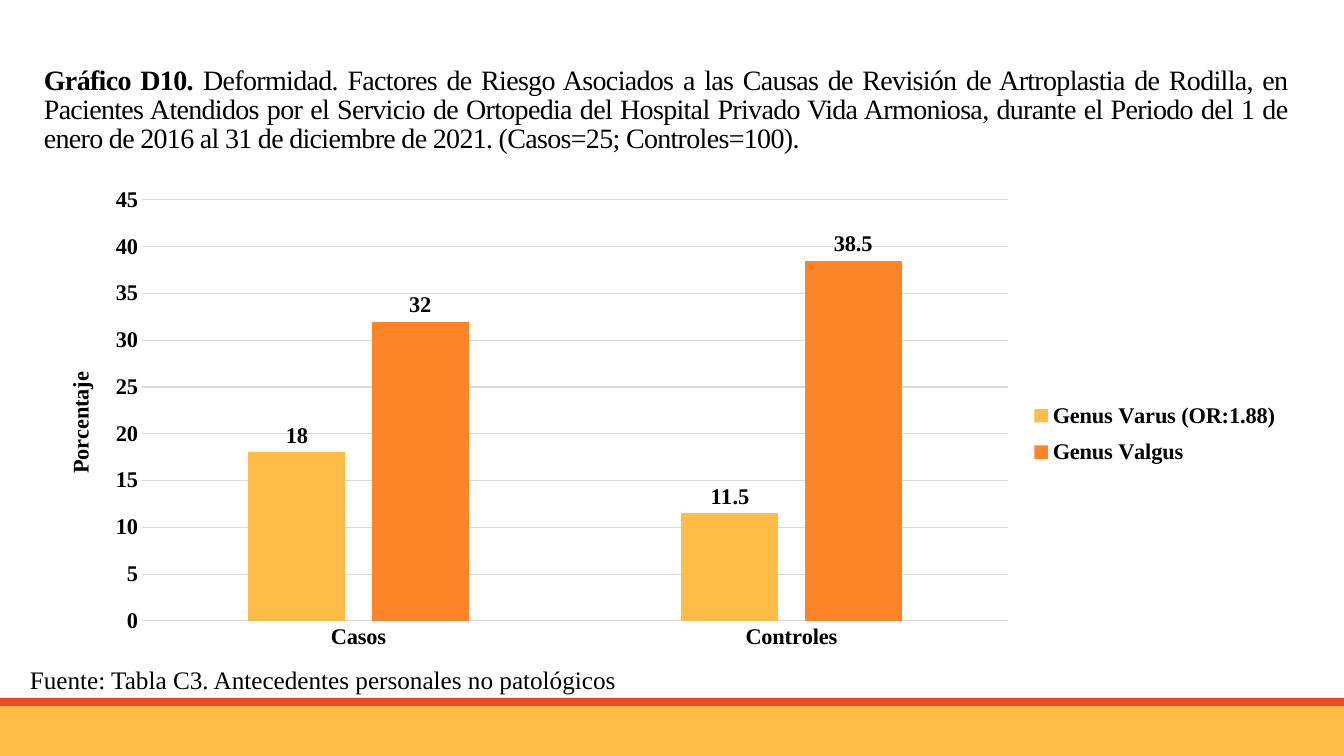
import pptx
import pptx.chart.data
import pptx.dml.color
import pptx.enum.chart
import pptx.enum.shapes
import pptx.enum.text
import pptx.oxml
import pptx.oxml.ns
import pptx.util

FONT = "Times New Roman"
BLACK = "000000"
GRID = "D9D9D9"
AMBER = "FFBD47"
ORANGE = "FF8427"
RED = "E84C22"
WIDTH, HEIGHT = 1344, 756


def px(length):
    return pptx.util.Emu(round(length * 914400 / 100.8))


def color(value):
    return pptx.dml.color.RGBColor.from_string(value)


class SlideBuilder:
    def __init__(self, slide):
        self.slide = slide

    def style(self, font, size, bold=False):
        font.name = FONT
        font.size = pptx.util.Pt(size)
        font.bold = bold
        font.color.rgb = color(BLACK)

    def band(self, top, height, fill):
        band = self.slide.shapes.add_shape(
            pptx.enum.shapes.MSO_SHAPE.RECTANGLE, 0, px(top), px(WIDTH), px(height))
        band.shadow.inherit = False
        band.fill.solid()
        band.fill.fore_color.rgb = color(fill)
        band.line.fill.background()

    def text(self, box, runs, size, tracking=0, leading=None, align=None, anchor=None):
        frame = self.slide.shapes.add_textbox(*map(px, box)).text_frame
        frame.word_wrap = True
        frame.vertical_anchor = anchor
        paragraph = frame.paragraphs[0]
        paragraph.alignment = align
        paragraph.line_spacing = leading
        for words, bold in runs:
            run = paragraph.add_run()
            run.text = words
            self.style(run.font, size, bold)
            if tracking:
                run._r.get_or_add_rPr().set("spc", str(tracking))

    def place(self, part, index, chart_box, **bounds):
        left, top, width, height = chart_box
        fractions = {
            "x": (bounds["x"] - left) / width,
            "y": (bounds["y"] - top) / height,
        }
        if "w" in bounds:
            fractions.update(w=bounds["w"] / width, h=bounds["h"] / height)
        target = '<c:layoutTarget val="inner"/>' if part.tag.endswith("plotArea") else ""
        modes = "".join(f'<c:{key}Mode val="edge"/>' for key in "xy")
        values = "".join(f'<c:{key} val="{value:.4f}"/>' for key, value in fractions.items())
        for old in part.findall(pptx.oxml.ns.qn("c:layout")):
            part.remove(old)
        part.insert(index, pptx.oxml.parse_xml(
            f'<c:layout {pptx.oxml.ns.nsdecls("c")}><c:manualLayout>'
            f'{target}{modes}{values}</c:manualLayout></c:layout>'))

    def columns(self, box, categories, groups, axis_title):
        data = pptx.chart.data.CategoryChartData()
        data.categories = categories
        for name, values, fill in groups:
            data.add_series(name, values)
        chart = self.slide.shapes.add_chart(
            pptx.enum.chart.XL_CHART_TYPE.COLUMN_CLUSTERED, *map(px, box), data).chart
        self.style(chart.font, 16, True)
        chart.has_title = False
        plot = chart.plots[0]
        plot.gap_width = 219
        plot.overlap = -27
        plot.vary_by_categories = False
        for series, (name, values, fill) in zip(plot.series, groups):
            series.format.fill.solid()
            series.format.fill.fore_color.rgb = color(fill)
            labels = series.data_labels
            labels.show_value = True
            labels.position = pptx.enum.chart.XL_LABEL_POSITION.OUTSIDE_END
            self.style(labels.font, 16, True)
        percent, groups_axis = chart.value_axis, chart.category_axis
        for axis in (percent, groups_axis):
            axis.major_tick_mark = pptx.enum.chart.XL_TICK_MARK.NONE
            axis.minor_tick_mark = pptx.enum.chart.XL_TICK_MARK.NONE
            self.style(axis.tick_labels.font, 16, True)
        percent.minimum_scale = 0
        percent.maximum_scale = 45
        percent.major_unit = 5
        percent.format.line.fill.background()
        for line in (percent.major_gridlines.format.line, groups_axis.format.line):
            line.color.rgb = color(GRID)
            line.width = pptx.util.Pt(0.75)
        title_run = percent.axis_title.text_frame.paragraphs[0].add_run()
        title_run.text = axis_title
        self.style(title_run.font, 16, True)
        chart.has_legend = True
        chart.legend.position = pptx.enum.chart.XL_LEGEND_POSITION.RIGHT
        chart.legend.include_in_layout = False
        self.style(chart.legend.font, 16, True)
        self.place(chart._chartSpace.chart.plotArea, 0, box, x=142, y=200, w=866, h=421)
        self.place(percent.axis_title._element, 1, box, x=62, y=368)
        self.place(chart.legend._element, 1, box, x=1024, y=392, w=262, h=84)


def main():
    deck = pptx.Presentation()
    deck.slide_width, deck.slide_height = px(WIDTH), px(HEIGHT)
    builder = SlideBuilder(deck.slides.add_slide(deck.slide_layouts[6]))
    builder.band(706, 50, AMBER)
    builder.band(698, 8, RED)
    builder.text(
        (34, 31, 1263, 160),
        [("Gráfico D10. ", True),
         ("Deformidad. Factores de Riesgo Asociados a las Causas de Revisión de "
          "Artroplastia de Rodilla, en Pacientes Atendidos por el Servicio de Ortopedia "
          "del Hospital Privado Vida Armoniosa, durante el Periodo del 1 de enero de 2016 "
          "al 31 de diciembre de 2021. (Casos=25; Controles=100).", False)],
        20, tracking=-50, leading=0.85,
        align=pptx.enum.text.PP_ALIGN.JUSTIFY, anchor=pptx.enum.text.MSO_ANCHOR.MIDDLE)
    builder.columns(
        (34, 178, 1263, 481), ["Casos", "Controles"],
        [("Genus Varus (OR:1.88)", (18, 11.5), AMBER),
         ("Genus Valgus", (32, 38.5), ORANGE)],
        "Porcentaje")
    builder.text(
        (20, 659, 671, 40),
        [("Fuente: Tabla C3. Antecedentes personales no patológicos", False)], 18)
    deck.save("out.pptx")


if __name__ == "__main__":
    main()
